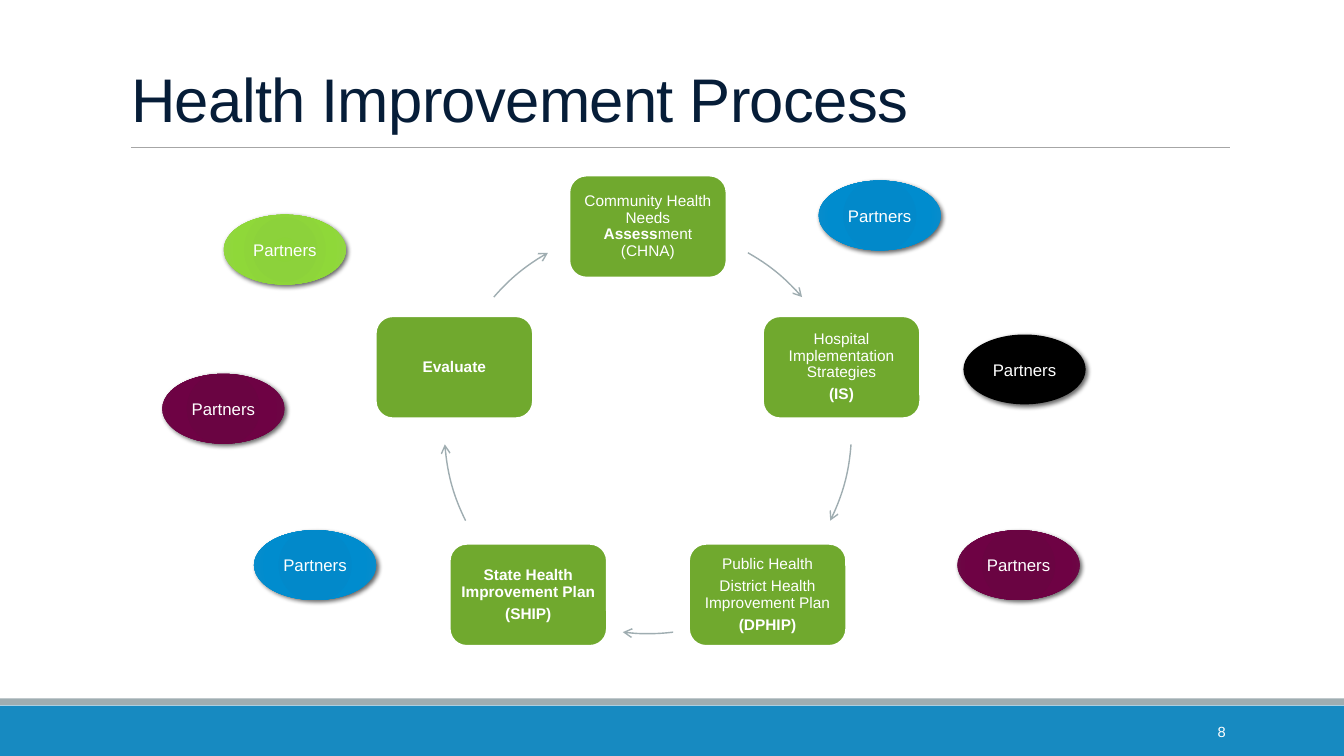
import math
from dataclasses import dataclass

import pptx
import pptx.util
from pptx.dml.color import RGBColor
from pptx.enum.shapes import MSO_CONNECTOR, MSO_SHAPE
from pptx.enum.text import MSO_ANCHOR, MSO_AUTO_SIZE, PP_ALIGN
from pptx.oxml.ns import qn
from lxml import etree

Cm, Pt = pptx.util.Cm, pptx.util.Pt


@dataclass(frozen=True)
class Theme:
    font: str = "Arial"
    navy: str = "061D38"
    white: str = "FFFFFF"
    green: str = "70A92E"
    grey: str = "9FADB1"
    rule: str = "A6A6A6"
    footer: str = "178AC1"
    black: str = "000000"
    plum: tuple = ("6B0242", "6A0442", "6E0244", "6A0B45")
    lime: tuple = ("8BD338", "8CD23B", "8FD839", "94D549")
    blue: tuple = ("0088C9", "0289CA", "008CCE", "0F8DCA")
    stops: tuple = (0, 34, 70, 100)
    title_size: float = 44
    partner_size: float = 12
    step_size: float = 11
    number_size: float = 10.5


def add_xml(parent, tag, **attrs):
    child = etree.SubElement(parent, qn(tag))
    for key, value in attrs.items():
        child.set(key, str(value))
    return child


def write(tf, text, *, size, color, font, align=PP_ALIGN.CENTER,
          anchor=MSO_ANCHOR.MIDDLE, spacing=None, after=None, inset=None):
    """Fill a text frame: newlines part paragraphs, asterisks toggle bold."""
    tf.word_wrap = True
    tf.auto_size = MSO_AUTO_SIZE.NONE
    tf.vertical_anchor = anchor
    if inset is not None:
        tf.margin_left = tf.margin_right = tf.margin_top = tf.margin_bottom = Cm(inset)
    for i, line in enumerate(text.split("\n")):
        p = tf.paragraphs[0] if i == 0 else tf.add_paragraph()
        p.alignment = align
        if spacing:
            p.line_spacing = spacing
        if after:
            p.space_after = Pt(after)
        for j, part in enumerate(line.split("*")):
            if part:
                r = p.add_run()
                r.text = part
                r.font.name = font
                r.font.size = Pt(size)
                r.font.bold = j % 2 == 1
                r.font.color.rgb = RGBColor.from_string(color)


class Deck:
    def __init__(self, theme):
        self.theme = theme
        self.prs = pptx.Presentation()
        self.prs.slide_width, self.prs.slide_height = Cm(33.87), Cm(19.05)
        self.s = self.prs.slides.add_slide(self.prs.slide_layouts[5])

    def shape(self, kind, x, y, w, h, fill=None):
        sp = self.s.shapes.add_shape(kind, Cm(x), Cm(y), Cm(w), Cm(h))
        sp.shadow.inherit = False
        sp.line.fill.background()
        if fill:
            sp.fill.solid()
            sp.fill.fore_color.rgb = RGBColor.from_string(fill)
        else:
            sp.fill.background()
        return sp

    def stroke(self, line, color, width):
        line.color.rgb = RGBColor.from_string(color)
        line.width = Pt(width)

    def title(self, text, x, y, w, h):
        sp = self.s.shapes.title
        sp.left, sp.top, sp.width, sp.height = Cm(x), Cm(y), Cm(w), Cm(h)
        t = self.theme
        write(sp.text_frame, text, size=t.title_size, color=t.navy, font=t.font,
              align=PP_ALIGN.LEFT, anchor=MSO_ANCHOR.BOTTOM, spacing=0.85)
        for r in sp.text_frame.paragraphs[0].runs:
            r.font._element.set("spc", "-50")

    def rule(self, x1, x2, y):
        line = self.s.shapes.add_connector(
            MSO_CONNECTOR.STRAIGHT, Cm(x1), Cm(y), Cm(x2), Cm(y))
        self.stroke(line.line, self.theme.rule, 0.5)
        add_xml(line._element.spPr, "a:effectLst")

    def number(self, text, x, y, w, h):
        t = self.theme
        box = self.s.shapes.add_textbox(Cm(x), Cm(y), Cm(w), Cm(h))
        write(box.text_frame, text, size=t.number_size, color=t.white,
              font=t.font, align=PP_ALIGN.RIGHT)

    def step(self, text, cx, cy, w=3.96, h=2.57):
        t = self.theme
        sp = self.shape(MSO_SHAPE.ROUNDED_RECTANGLE, cx - w / 2, cy - h / 2, w, h, t.green)
        self.stroke(sp.line, t.white, 1.25)
        write(sp.text_frame, text, size=t.step_size, color=t.white, font=t.font,
              spacing=0.9, after=3.85, inset=0.13)

    def arc_arrow(self, cx, cy, radius, start, end):
        """Draw a clockwise arc between two angles in degrees from east."""
        sp = self.shape(MSO_SHAPE.ARC, cx - radius, cy - radius, 2 * radius, 2 * radius)
        for i, angle in enumerate((start, end)):
            sp.adjustments[i] = angle % 360 * 0.6
        self.stroke(sp.line, self.theme.grey, 1)
        add_xml(sp.line._get_or_add_ln(), "a:tailEnd", type="arrow")

    def partner(self, x, y, colors, w=3.08, h=1.76):
        t = self.theme
        sp = self.shape(MSO_SHAPE.OVAL, x, y, w, h, t.black)
        spPr = sp._element.spPr
        if colors != t.black:
            sp.fill.gradient()
            grad = spPr.find(qn("a:gradFill"))
            for child in list(grad):
                grad.remove(child)
            stops = add_xml(grad, "a:gsLst")
            for pos, color in zip(t.stops, colors):
                add_xml(add_xml(stops, "a:gs", pos=pos * 1000), "a:srgbClr", val=color)
            circle = add_xml(grad, "a:path", path="circle")
            add_xml(circle, "a:fillToRect", l=50000, t=50000, r=50000, b=50000)
        shadow = add_xml(spPr.find(qn("a:effectLst")), "a:outerShdw", blurRad=Pt(3.5),
                         dist=Pt(2), dir=45 * 60000, algn="tl", rotWithShape=0)
        add_xml(add_xml(shadow, "a:srgbClr", val=t.black), "a:alpha", val=60000)
        write(sp.text_frame, "Partners", size=t.partner_size, color=t.white, font=t.font)


def main():
    t = Theme()
    deck = Deck(t)
    deck.shape(MSO_SHAPE.RECTANGLE, 0, 17.78, 33.87, 1.27, t.footer)
    deck.shape(MSO_SHAPE.RECTANGLE, 0, 17.6, 33.87, 0.17, t.grey)
    deck.rule(3.3, 31, 3.71)
    deck.title("Health Improvement Process", 3.05, 0.79, 27.94, 2.74)

    cx, cy, radius = 16.33, 10.84, 5.13
    steps = [
        "Community Health Needs *Assess*ment (CHNA)",
        "Hospital Implementation Strategies\n*(IS)*",
        "Public Health\nDistrict Health Improvement Plan\n*(DPHIP)*",
        "*State Health Improvement Plan*\n*(SHIP)*",
        "*Evaluate*",
    ]
    arcs = [(-60.6, -40.8), (4, 26.4), (82.9, 97.1), (153.6, 176), (220.8, 240.6)]
    for i, (text, (start, end)) in enumerate(zip(steps, arcs)):
        angle = math.radians(360 / len(steps) * i - 90)
        deck.step(text, cx + radius * math.cos(angle), cy + radius * math.sin(angle))
        deck.arc_arrow(cx, cy, radius, start, end)

    for x, y, colors in [(4.09, 9.42, t.plum), (5.64, 5.41, t.lime),
                         (20.63, 4.55, t.blue), (24.28, 8.43, t.black),
                         (24.13, 13.36, t.plum), (6.4, 13.36, t.blue)]:
        deck.partner(x, y, colors)
    deck.number("8", 27.51, 17.93, 3.63, 1.02)
    deck.prs.save("out.pptx")


if __name__ == "__main__":
    main()
